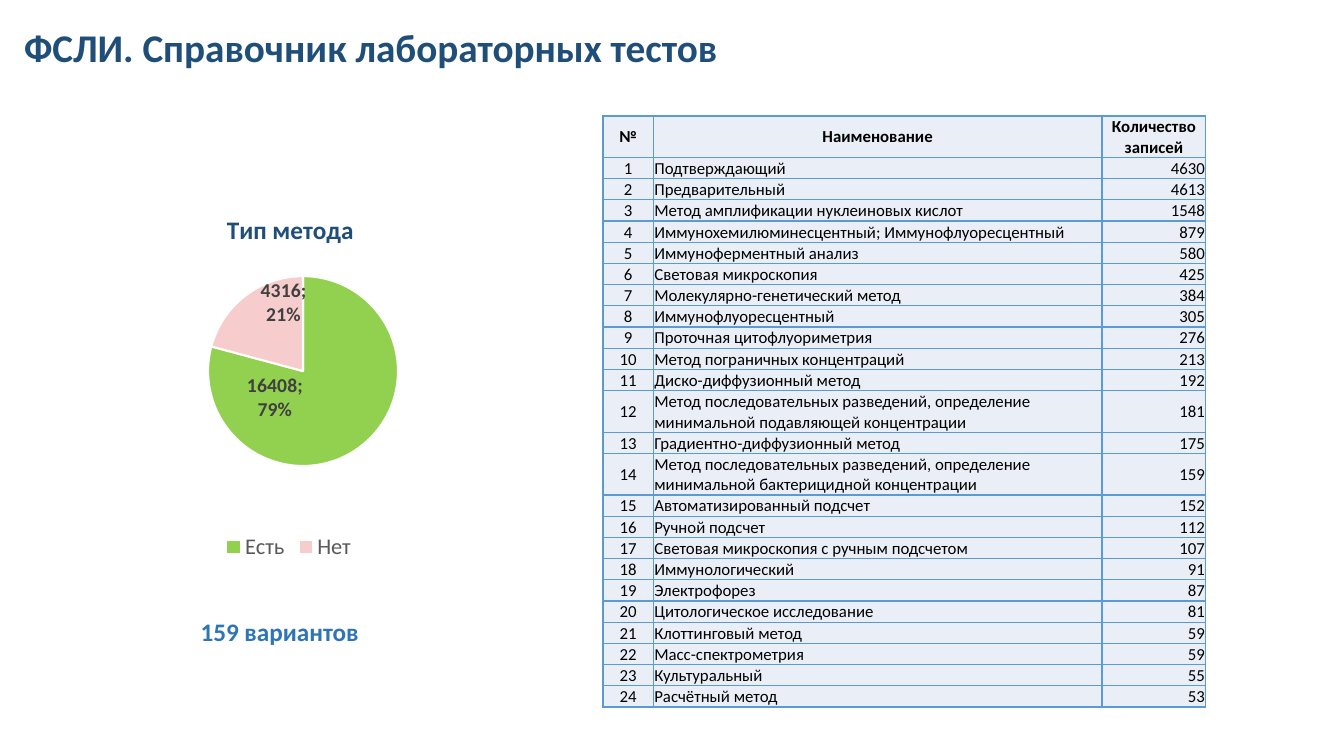
"""Build the laboratory test directory slide: a method type pie and a table of methods."""
import pptx
import pptx.util
import pptx.dml.color
import pptx.chart.data
import pptx.enum.chart
import pptx.enum.text
import pptx.oxml
import pptx.oxml.ns

Inches, Pt = pptx.util.Inches, pptx.util.Pt
ALIGN = pptx.enum.text.PP_ALIGN
NAVY = "1F4E79"


def style(font, size, color, bold=False):
    font.name, font.size, font.bold = "Calibri", Pt(size), bold
    font.color.rgb = pptx.dml.color.RGBColor.from_string(color)


def xml(tag, inner="", attrs=""):
    ns = pptx.oxml.ns.nsdecls("a", "c")
    return pptx.oxml.parse_xml(f"<{tag} {ns} {attrs}>{inner}</{tag}>")


prs = pptx.Presentation()
prs.slide_width, prs.slide_height = Inches(13.33), Inches(7.5)
s = prs.slides.add_slide(prs.slide_layouts[6])

for text, box, size, color in [
    ("ФСЛИ. Справочник лабораторных тестов", (0.14, 0.18, 12.69, 0.57), 28, NAVY),
    ("159 вариантов", (1.89, 6.07, 1.89, 0.4), 18, "2E75B6"),
]:
    tf = s.shapes.add_textbox(*map(Inches, box)).text_frame
    tf.word_wrap = True
    tf.auto_size = pptx.enum.text.MSO_AUTO_SIZE.SHAPE_TO_FIT_TEXT
    tf.text = text
    style(tf.paragraphs[0].runs[0].font, size, color, True)

data = pptx.chart.data.CategoryChartData()
data.categories = ["Есть", "Нет"]
data.add_series("Тип метода", (16408, 4316))
chart = s.shapes.add_chart(
    pptx.enum.chart.XL_CHART_TYPE.PIE,
    Inches(0.51), Inches(1.83), Inches(4.71), Inches(3.78), data).chart
style(chart.font, 10, "000000")
chart.has_title = True
chart.chart_title.include_in_layout = False
tf = chart.chart_title.text_frame
tf.text = "Тип метода"
style(tf.paragraphs[0].runs[0].font, 18, NAVY, True)
chart.has_legend = True
chart.legend.position = pptx.enum.chart.XL_LEGEND_POSITION.BOTTOM
chart.legend.include_in_layout = False
style(chart.legend.font, 16, "595959")

pie = chart.plots[0].series[0]
labels = pie.data_labels
labels.show_value = labels.show_percentage = True
style(labels.font, 14, "404040", True)
for i, color in enumerate(["92D050", "F6CCCC"]):
    point = pie.points[i]
    point.format.fill.solid()
    point.format.fill.fore_color.rgb = pptx.dml.color.RGBColor.from_string(color)
    point.format.line.width = Pt(1.5)
    point.format.line.color.rgb = pptx.dml.color.RGBColor.from_string("FFFFFF")
    style(point.data_label.font, 14, "404040", True)
    point.data_label.position = pptx.enum.chart.XL_LABEL_POSITION.CENTER

root = chart._chartSpace
for show in root.xpath(".//c:ser//c:showPercent"):
    show.set("val", "1")
for bubble in root.xpath(".//c:ser//c:showBubbleSize"):
    separator = xml("c:separator")
    separator.text = "; "
    bubble.addnext(separator)
for path, places in [
    (".//c:dLbl[1]/c:idx", {"x": -0.12, "y": -0.03}),
    (".//c:dLbl[2]/c:idx", {"x": 0.02, "y": -0.08}),
    (".//c:title/c:tx", {"xMode": "edge", "yMode": "edge", "x": 0.36, "y": 0.06}),
    (".//c:plotArea", {"layoutTarget": "inner", "xMode": "edge", "yMode": "edge",
                       "x": 0.33, "y": 0.24, "w": 0.4, "h": 0.5}),
]:
    node = root.xpath(path)[0]
    for old in node.xpath("./c:layout | ../c:layout[parent::c:title]"):
        old.getparent().remove(old)
    inner = "".join(f'<c:{k} val="{v}"/>' for k, v in places.items())
    layout = xml("c:layout", f"<c:manualLayout>{inner}</c:manualLayout>")
    if path.endswith("plotArea"):
        node.insert(0, layout)
    else:
        node.addnext(layout)

methods = [
    ("Подтверждающий", 4630),
    ("Предварительный", 4613),
    ("Метод амплификации нуклеиновых кислот", 1548),
    ("Иммунохемилюминесцентный; Иммунофлуоресцентный", 879),
    ("Иммуноферментный анализ", 580),
    ("Световая микроскопия", 425),
    ("Молекулярно-генетический метод", 384),
    ("Иммунофлуоресцентный", 305),
    ("Проточная цитофлуориметрия", 276),
    ("Метод пограничных концентраций", 213),
    ("Диско-диффузионный метод", 192),
    ("Метод последовательных разведений, определение минимальной подавляющей концентрации", 181),
    ("Градиентно-диффузионный метод", 175),
    ("Метод последовательных разведений, определение минимальной бактерицидной концентрации", 159),
    ("Автоматизированный подсчет", 152),
    ("Ручной подсчет", 112),
    ("Световая микроскопия с ручным подсчетом", 107),
    ("Иммунологический", 91),
    ("Электрофорез", 87),
    ("Цитологическое исследование", 81),
    ("Клоттинговый метод", 59),
    ("Масс-спектрометрия", 59),
    ("Культуральный", 55),
    ("Расчётный метод", 53),
]
rows = [("№", "Наименование", "Количество записей")]
rows += [(n, name, count) for n, (name, count) in enumerate(methods, 1)]
lines = [2 if r == 0 or len(row[1]) > 60 else 1 for r, row in enumerate(rows)]
line_height = Inches(5.78) // sum(lines)
table = s.shapes.add_table(
    len(rows), 3, Inches(5.98), Inches(1.15), Inches(5.98), Inches(5.78)).table
table.first_row = table.horz_banding = False
for column, width in zip(table.columns, (0.5, 4.45, 1.03)):
    column.width = Inches(width)
for r, row in enumerate(rows):
    table.rows[r].height = line_height * lines[r]
    for c, value in enumerate(row):
        cell = table.cell(r, c)
        cell.margin_left = cell.margin_top = cell.margin_right = Inches(0.01)
        cell.margin_bottom = 0
        cell.vertical_anchor = pptx.enum.text.MSO_ANCHOR.MIDDLE
        cell.fill.solid()
        cell.fill.fore_color.rgb = pptx.dml.color.RGBColor.from_string("EAEFF7")
        cell.text_frame.text = str(value)
        p = cell.text_frame.paragraphs[0]
        p.alignment = ALIGN.CENTER if r == 0 else (ALIGN.CENTER, ALIGN.LEFT, ALIGN.RIGHT)[c]
        style(p.runs[0].font, 12, "000000", r == 0)
        for i, side in enumerate("LRTB"):
            cell._tc.get_or_add_tcPr().insert(i, xml(
                f"a:ln{side}", '<a:solidFill><a:srgbClr val="5B9BD5"/></a:solidFill>',
                'w="12700"'))

prs.save("out.pptx")
